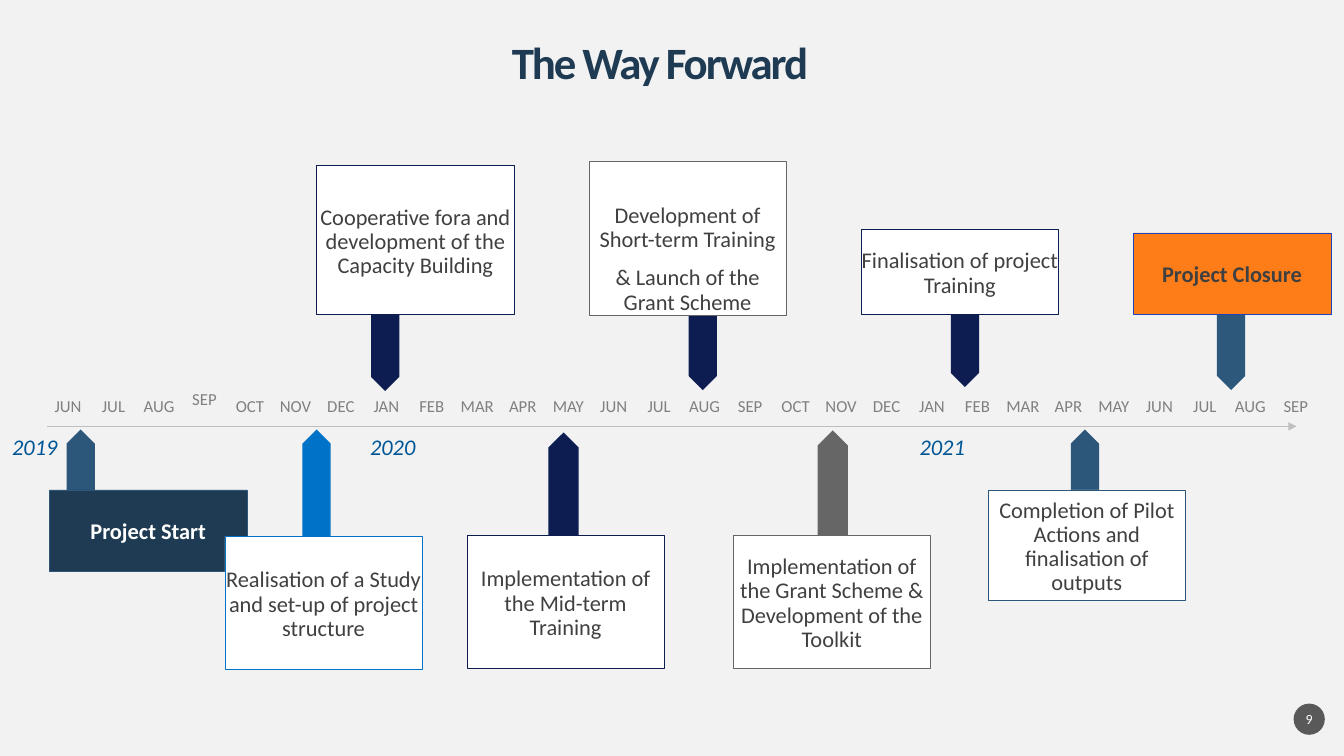
from lxml import etree
from pptx import Presentation
from pptx import util as u
from pptx.dml.color import RGBColor
from pptx.enum import shapes, text
from pptx.oxml.ns import qn

PX = 9144  # EMU per px, 100 px to the inch
FONT = "Calibri"
WHITE, NAVY, DARK, STEEL, BLUE, GRAY = "FFFFFF", "0D1D51", "1E3B53", "2C567A", "0072C7", "666666"
INK = "404040"
MONTHS = ["JAN", "FEB", "MAR", "APR", "MAY", "JUN",
          "JUL", "AUG", "SEP", "OCT", "NOV", "DEC"]

# box, lines, fill, border, text colour, bold, arrow (centre x, tip y, thickness, colour)
MILESTONES = [
    ((49, 486, 196, 81), ["Project Start"], DARK, STEEL, WHITE, True, (80, 426, 28, STEEL)),
    ((223, 532, 196, 132), ["Realisation of a Study and set-up of project structure"],
     WHITE, BLUE, INK, False, (314, 426, 28, BLUE)),
    ((463, 531, 196, 132), ["Implementation of the Mid-term Training"],
     WHITE, NAVY, INK, False, (559, 429, 30, NAVY)),
    ((727, 531, 196, 132), ["Implementation of the Grant Scheme & Development of the Toolkit"],
     WHITE, GRAY, INK, False, (826, 427, 30, GRAY)),
    ((980, 486, 196, 110), ["Completion of Pilot Actions and finalisation of outputs"],
     WHITE, STEEL, INK, False, (1076, 426, 28, STEEL)),
    ((314, 164, 196, 148), ["Cooperative fora and development of the Capacity Building"],
     WHITE, NAVY, INK, False, (382, 388, 28, NAVY)),
    ((584, 160, 196, 153), ["Development of Short-term Training", "& Launch of the Grant Scheme"],
     WHITE, GRAY, INK, False, (697, 387, 28, NAVY)),
    ((854, 227, 196, 85), ["Finalisation of project Training"],
     WHITE, NAVY, INK, False, (957, 384, 28, NAVY)),
    ((1124, 231, 196, 81), ["Project Closure"],
     "FE7D18", "1E44BC", INK, True, (1221, 387, 28, "2D587C")),
]


def rgb(value):
    return RGBColor.from_string(value)


def px(*lengths):
    return [u.Emu(round(length * PX)) for length in lengths]


def write(shape, lines, size, color, bold=False, italic=False, top_inset=0,
          anchor=text.MSO_ANCHOR.MIDDLE, line_spacing=0.9, space_before=10):
    frame = shape.text_frame
    frame.word_wrap = True
    frame.vertical_anchor = anchor
    frame.margin_left = frame.margin_right = frame.margin_bottom = 0
    frame.margin_top = px(top_inset)[0]
    frame.text = "\n".join(lines)
    for paragraph in frame.paragraphs:
        paragraph.alignment = text.PP_ALIGN.CENTER
        paragraph.line_spacing = line_spacing
        paragraph.space_before = u.Pt(space_before)
        for run in paragraph.runs:
            font = run.font
            font.name, font.size = FONT, u.Pt(size)
            font.bold, font.italic = bold, italic
            font.color.rgb = rgb(color)


def add_label(slide, box, label, size, color, **style):
    shape = slide.shapes.add_textbox(*px(*box))
    write(shape, [label], size, color, **style)
    return shape


def add_filled(slide, kind, box, fill, border=None):
    shape = slide.shapes.add_shape(kind, *px(*box))
    shape.shadow.inherit = False
    shape.fill.solid()
    shape.fill.fore_color.rgb = rgb(fill)
    if border:
        shape.line.color.rgb = rgb(border)
        shape.line.width = u.Pt(0.25)
    else:
        shape.line.fill.background()
    return shape


def add_title(slide, box):
    title = add_label(slide, box, "The Way Forward", 32, DARK, bold=True, space_before=0)
    properties = title.text_frame.paragraphs[0].runs[0].font
    properties.language_id = None
    title.text_frame.paragraphs[0].runs[0]._r.get_or_add_rPr().set("spc", "-150")


def add_axis(slide, box):
    left, top, width, height = box
    # Time line with arrowhead
    line_y = top + height
    axis = slide.shapes.add_connector(shapes.MSO_CONNECTOR.STRAIGHT,
                                      *px(left, line_y, left + width, line_y))
    axis.line.color.rgb = rgb("BFBFBF")
    axis.line.width = u.Pt(0.5)
    etree.SubElement(axis.line._get_or_add_ln(), qn("a:tailEnd"), type="triangle")
    etree.SubElement(axis._element.spPr, qn("a:effectLst"))

    # Months from June 2019 to September 2021; the first September sits higher
    for index in range(28):
        lift = 7 if index == 3 else 0
        add_label(slide, (left + index * 45.1, top - lift, 41, 22), MONTHS[(index + 5) % 12],
                  12, "808080", anchor=text.MSO_ANCHOR.TOP)

    # Years
    for year, offset in (("2019", -35), ("2020", 320), ("2021", 865)):
        add_label(slide, (left + offset, line_y + 11, 45, 22), year, 16, "005695", italic=True)


def add_milestone(slide, box, lines, fill, border, color, bold, arrow):
    left, top, width, height = box
    center_x, tip, thickness, arrow_fill = arrow
    # Pointer from the card's near edge to the axis
    points_up = tip < top
    edge = top if points_up else top + height
    length = abs(edge - tip)
    pointer = add_filled(slide, shapes.MSO_SHAPE.PENTAGON,
                         (center_x - length / 2, (edge + tip - thickness) / 2, length, thickness),
                         arrow_fill)
    pointer.rotation = 270 if points_up else 90

    # Card; two-part text sits lower
    card = add_filled(slide, shapes.MSO_SHAPE.RECTANGLE, box, fill, border)
    write(card, lines, 16, color, bold=bold, top_inset=42 if len(lines) > 1 else 4)


def add_page_number(slide, box):
    badge = add_filled(slide, shapes.MSO_SHAPE.OVAL, box, "595959")
    write(badge, ["9"], 10, WHITE, line_spacing=1.0, space_before=0)


def main():
    presentation = Presentation()
    presentation.slide_width, presentation.slide_height = u.Inches(13.33), u.Inches(7.5)
    slide = presentation.slides.add_slide(presentation.slide_layouts[6])
    slide.background.fill.solid()
    slide.background.fill.fore_color.rgb = rgb("F2F2F2")

    add_axis(slide, (47, 395, 1239, 28))
    add_title(slide, (35, 41, 1239, 47))
    for milestone in MILESTONES:
        add_milestone(slide, *milestone)
    add_page_number(slide, (1283, 698, 31, 31))
    presentation.save("out.pptx")


if __name__ == "__main__":
    main()
